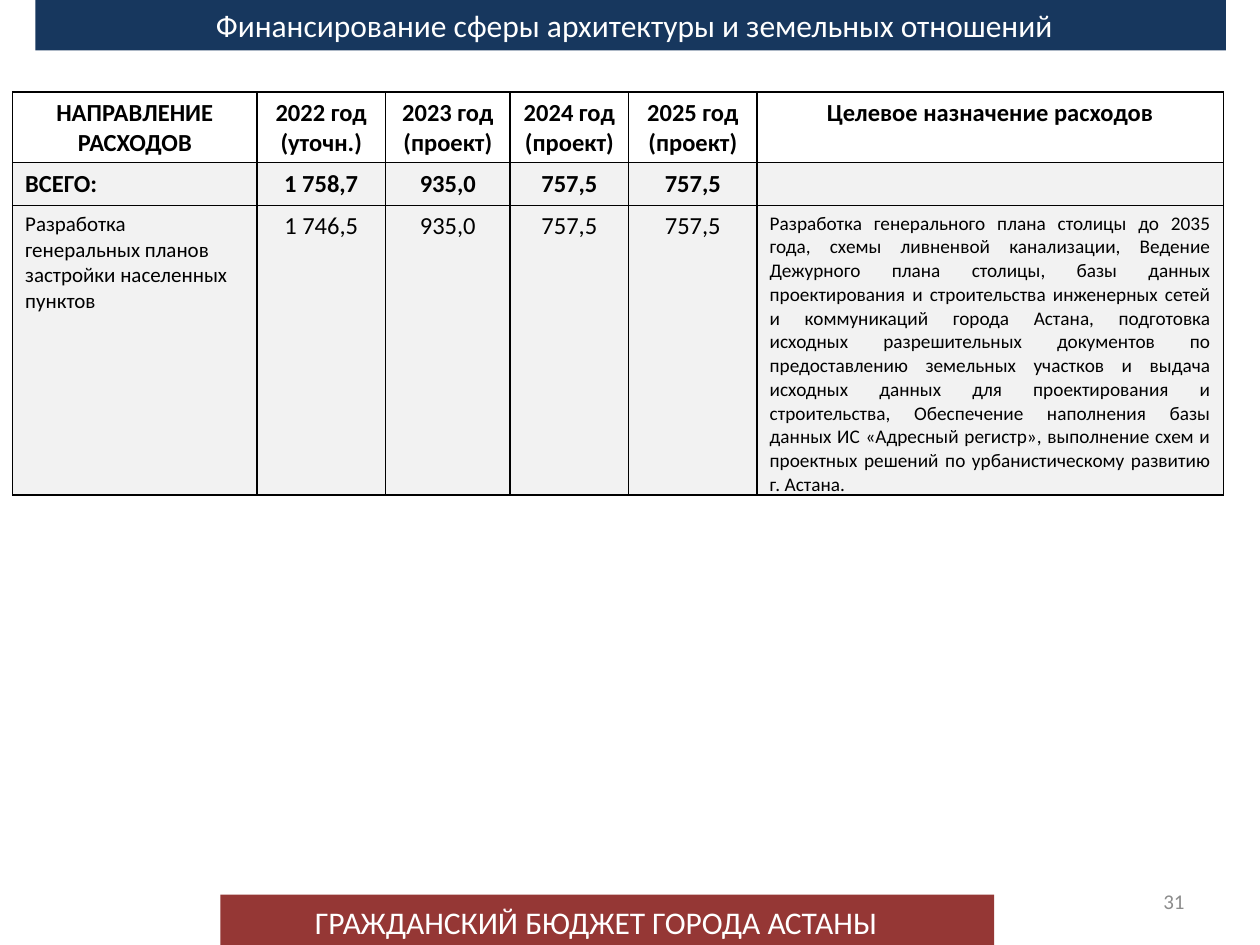
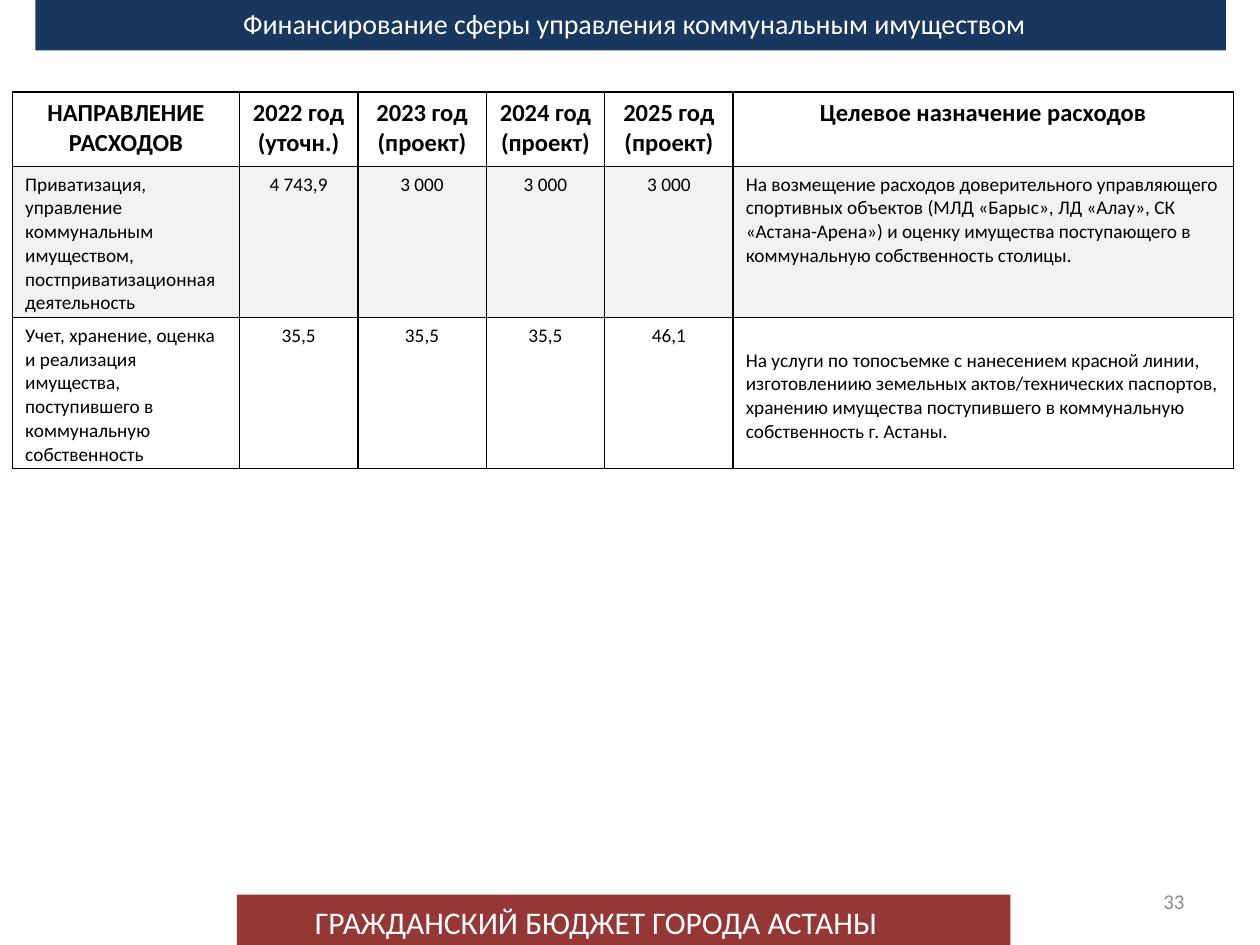
from dataclasses import dataclass

from lxml.etree import SubElement
from pptx import Presentation
from pptx.dml.color import RGBColor
from pptx.enum.shapes import MSO_SHAPE
from pptx.enum.text import MSO_ANCHOR, MSO_AUTO_SIZE, PP_ALIGN
from pptx.oxml.ns import qn
from pptx.util import Inches, Pt

L, C, R, J = PP_ALIGN.LEFT, PP_ALIGN.CENTER, PP_ALIGN.RIGHT, PP_ALIGN.JUSTIFY
COLS, ROWS = 100, 75  # slide grid


@dataclass(frozen=True)
class Theme:
    font: str = "Calibri"
    navy: str = "17375E"
    red: str = "953735"
    white: str = "FFFFFF"
    black: str = "000000"
    grey: str = "8C8C8C"
    shade: str = "F2F2F2"
    banner: int = 18
    head: int = 14
    body: int = 12
    small: int = 11
    border: int = 1


T = Theme()
FOOTER = "ГРАЖДАНСКИЙ БЮДЖЕТ ГОРОДА АСТАНЫ"
HEADER = ["НАПРАВЛЕНИЕ РАСХОДОВ", "2022 год\n(уточн.)", "2023 год (проект)",
          "2024 год (проект)", "2025 год\n(проект)", "Целевое назначение расходов"]


@dataclass
class Row:
    """One table row: texts, height in grid rows, text sizes by column."""
    texts: list
    height: float
    sizes: list
    bold: bool = False
    shaded: bool = True
    aligns: tuple = (L, C, C, C, C, L)
    last_anchor: MSO_ANCHOR = MSO_ANCHOR.TOP


def header_row(height):
    return Row(HEADER, height, [T.head] * 6, bold=True, shaded=False, aligns=(C,) * 6)


class Deck:
    def __init__(self):
        self.prs = Presentation()
        self.prs.slide_width, self.prs.slide_height = Inches(10), Inches(7.5)
        self.s = None

    def x(self, cols):
        return round(self.prs.slide_width * cols / COLS)

    def y(self, rows):
        return round(self.prs.slide_height * rows / ROWS)

    def box(self, left, top, width, height):
        return self.x(left), self.y(top), self.x(width), self.y(height)

    def set_text(self, tf, text, size, color, align, bold=False):
        tf.text = text
        for p in tf.paragraphs:
            p.alignment = align
            f = p.font
            f.name, f.size, f.bold = T.font, Pt(size), bold
            f.color.rgb = RGBColor.from_string(color)
            if not text:  # keeps an empty cell at its own text size
                SubElement(p._p, qn("a:endParaRPr"), sz=str(size * 100))

    def band(self, color, *place):
        sp = self.s.shapes.add_shape(MSO_SHAPE.RECTANGLE, *self.box(*place))
        sp.shadow.inherit = False
        sp.fill.solid()
        sp.fill.fore_color.rgb = RGBColor.from_string(color)
        sp.line.fill.background()

    def text(self, text, size, color, align, *place, anchor=MSO_ANCHOR.TOP):
        tf = self.s.shapes.add_textbox(*self.box(*place)).text_frame
        tf.word_wrap, tf.vertical_anchor = True, anchor
        self.set_text(tf, text, size, color, align)

    def title(self, text, size):
        sp = self.s.shapes.title
        sp.left, sp.top, sp.width, sp.height = self.box(10.2, 0, 80.3, 4)
        tf = sp.text_frame
        tf.word_wrap, tf.vertical_anchor = True, MSO_ANCHOR.TOP
        tf.auto_size = MSO_AUTO_SIZE.SHAPE_TO_FIT_TEXT
        self.set_text(tf, text, size, T.white, C)
        sp.element.getparent().append(sp.element)  # in front of its band

    def slide(self, title, number, title_size=T.banner, footer_left=17.5):
        self.s = self.prs.slides.add_slide(self.prs.slide_layouts[5])
        self.band(T.red, footer_left, 71, 61.4, 4)
        self.text(FOOTER, T.banner, T.white, J, 24, 71.2, 52.8, 4)
        self.band(T.navy, 2.8, 0, 94.5, 4)
        self.title(title, title_size)
        self.text(number, T.body, T.grey, R, 71.7, 69.5, 23.3, 4,
                  anchor=MSO_ANCHOR.MIDDLE)

    def borders(self, cell):
        tcPr = cell._tc.get_or_add_tcPr()
        for i, side in enumerate(("lnL", "lnR", "lnT", "lnB")):
            ln = tcPr.makeelement(qn(f"a:{side}"), {"w": str(Pt(T.border))})
            fill = SubElement(ln, qn("a:solidFill"))
            SubElement(fill, qn("a:srgbClr"), val=T.black)
            tcPr.insert(i, ln)

    def table(self, widths, rows):
        place = self.box(1, 7.3, sum(widths), sum(row.height for row in rows))
        tbl = self.s.shapes.add_table(len(rows), len(widths), *place).table
        tbl.first_row = tbl.horz_banding = False
        for col, width in zip(tbl.columns, widths):
            col.width = self.x(width)
        for r, row in enumerate(rows):
            tbl.rows[r].height = self.y(row.height)
            for c, text in enumerate(row.texts):
                cell = tbl.cell(r, c)
                cell.margin_bottom = 0
                if row.shaded:
                    cell.fill.solid()
                    cell.fill.fore_color.rgb = RGBColor.from_string(T.shade)
                else:
                    cell.fill.background()
                self.set_text(cell.text_frame, text, row.sizes[c], T.black,
                              row.aligns[c], row.bold)
                self.borders(cell)
            cell.vertical_anchor = row.last_anchor


def main():
    d = Deck()

    # Architecture and land relations
    d.slide("Финансирование сферы архитектуры и земельных отношений", "31")
    d.table([19.4, 10.2, 9.9, 9.4, 10.2, 37], [
        header_row(5.6),
        Row(["ВСЕГО:", "1 758,7", "935,0", "757,5", "757,5", ""], 3.4,
            [T.head] * 6, bold=True),
        Row(["Разработка генеральных планов застройки населенных пунктов",
             "1 746,5", "935,0", "757,5", "757,5",
             "Разработка генерального плана столицы до 2035 года, схемы ливненвой "
             "канализации, Ведение Дежурного плана столицы, базы данных проектирования "
             "и строительства инженерных сетей и коммуникаций города Астана, подготовка "
             "исходных разрешительных документов по предоставлению земельных участков "
             "и выдача исходных данных для проектирования и строительства, Обеспечение "
             "наполнения базы данных ИС «Адресный регистр», выполнение схем и проектных "
             "решений по урбанистическому развитию г. Астана."],
            23, [T.body] + [T.head] * 4 + [T.small], aligns=(L, C, C, C, C, J)),
    ])

    # Municipal property management
    d.slide("Финансирование сферы управления коммунальным имуществом", "33",
            title_size=16, footer_left=18.8)
    d.table([18, 9.4, 10.2, 9.4, 10.2, 39.7], [
        header_row(5.9),
        Row(["Приватизация, управление коммунальным имуществом, "
             "постприватизационная деятельность",
             "4 743,9", "3 000", "3 000", "3 000",
             "На возмещение расходов доверительного управляющего спортивных объектов "
             "(МЛД «Барыс», ЛД «Алау», СК «Астана-Арена») и оценку имущества "
             "поступающего в коммунальную собственность столицы."],
            12, [T.small] * 6),
        Row(["Учет, хранение, оценка и реализация имущества, поступившего в "
             "коммунальную собственность",
             "35,5", "35,5", "35,5", "46,1",
             "На услуги по топосъемке с нанесением красной линии, изготовлениию "
             "земельных актов/технических паспортов, хранению имущества поступившего "
             "в коммунальную собственность г. Астаны."],
            12, [T.small] * 6, shaded=False, last_anchor=MSO_ANCHOR.MIDDLE),
    ])

    d.prs.save("out.pptx")


if __name__ == "__main__":
    main()
